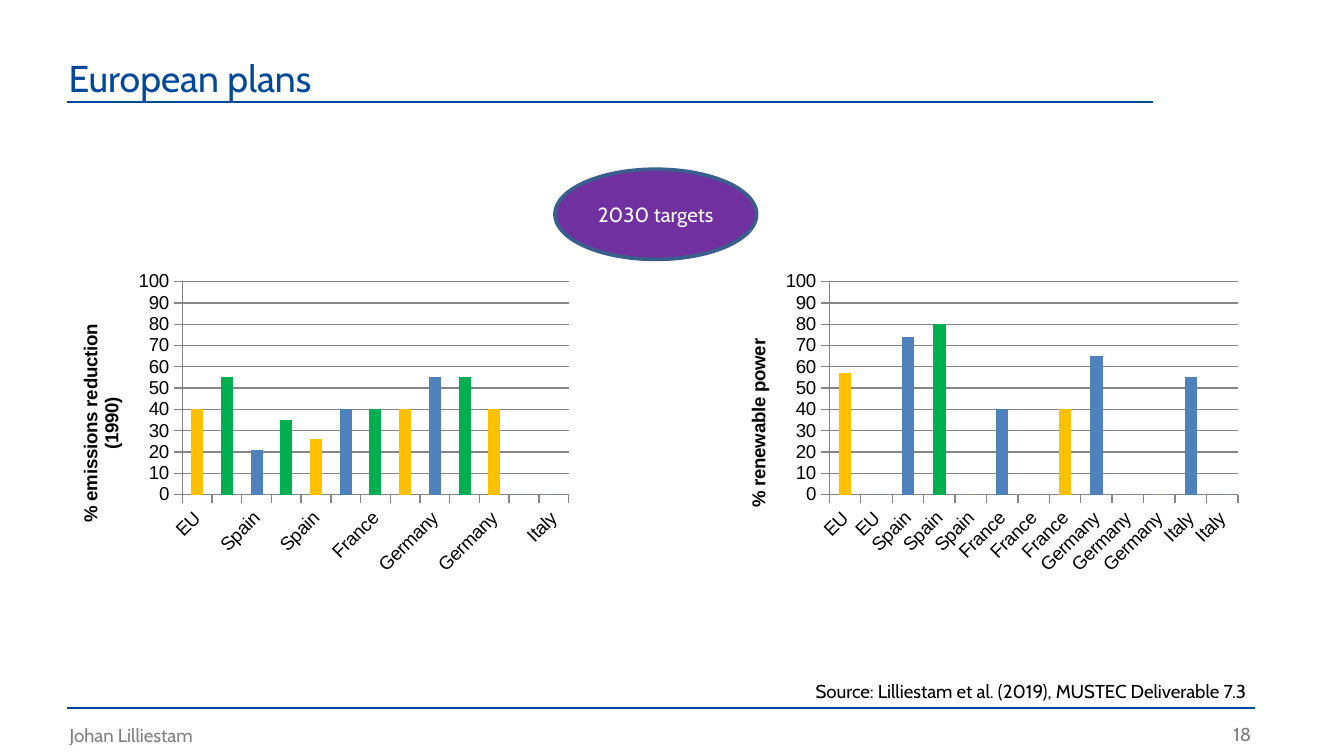
from pptx import Presentation
from pptx.chart.data import CategoryChartData
from pptx.dml.color import RGBColor
from pptx.enum.chart import XL_CHART_TYPE, XL_TICK_MARK
from pptx.enum.shapes import MSO_CONNECTOR, MSO_SHAPE
from pptx.enum.text import MSO_ANCHOR, PP_ALIGN
from pptx.oxml.ns import qn
from pptx.util import Inches, Pt
from lxml.etree import SubElement

BLUE, GRAY, BLACK, WHITE = "004899", "808080", "000000", "FFFFFF"
BAR, YELLOW, GREEN, GRID = "4F81BD", "FFC000", "00B050", "868686"
COUNTRIES = ["EU"] * 2 + ["Spain"] * 3 + ["France"] * 3 + ["Germany"] * 3 + ["Italy"] * 2
YELLOW_BARS, GREEN_BARS = (0, 4, 7, 10), (1, 3, 6, 9)


def color(value):
    return RGBColor.from_string(value)


def write(frame, text, size=10, fill=BLACK, align=PP_ALIGN.LEFT,
          anchor=MSO_ANCHOR.TOP, wrap=True, inset=None):
    frame.word_wrap = wrap
    frame.vertical_anchor = anchor
    if inset is not None:
        frame.margin_left = frame.margin_right = Inches(inset)
        frame.margin_top = frame.margin_bottom = Inches(inset)
    para = frame.paragraphs[0]
    para.alignment = align
    span = para.add_run()
    span.text = text
    span.font.name = "Cabin"
    span.font.size = Pt(size)
    span.font.color.rgb = color(fill)


class PlanSlide:
    def __init__(self, deck):
        self.page = deck.slides.add_slide(deck.slide_layouts[5])
        self.shapes = self.page.shapes

    def title(self, text, left, top, width, height):
        box = self.shapes.title
        box.left, box.top = Inches(left), Inches(top)
        box.width, box.height = Inches(width), Inches(height)
        write(box.text_frame, text, size=20, fill=BLUE, inset=0)

    def text(self, text, left, top, width, height, **style):
        box = self.shapes.add_textbox(Inches(left), Inches(top), Inches(width), Inches(height))
        write(box.text_frame, text, **style)

    def rule(self, left, right, top):
        line = self.shapes.add_connector(MSO_CONNECTOR.STRAIGHT, Inches(left), Inches(top),
                                         Inches(right), Inches(top))
        line.line.color.rgb = color(BLUE)
        line.line.width = Pt(1)
        SubElement(line._element.spPr, qn("a:effectLst"))

    def ellipse(self, text, left, top, width, height):
        shape = self.shapes.add_shape(MSO_SHAPE.OVAL, Inches(left), Inches(top),
                                      Inches(width), Inches(height))
        shape.shadow.inherit = False
        shape.fill.solid()
        shape.fill.fore_color.rgb = color("7030A0")
        shape.line.color.rgb = color("3A5F8C")
        shape.line.width = Pt(2)
        write(shape.text_frame, text, size=11, fill=WHITE,
              align=PP_ALIGN.CENTER, anchor=MSO_ANCHOR.MIDDLE)

    def chart(self, axis_title, values, left, width):
        data = CategoryChartData()
        data.categories = COUNTRIES
        data.add_series("Series 1", values)
        chart = self.shapes.add_chart(XL_CHART_TYPE.COLUMN_CLUSTERED, Inches(left), Inches(1.97),
                                      Inches(width), Inches(2.36), data).chart
        chart.has_legend = False
        chart.has_title = False
        chart.font.name = "Arial"
        chart.font.size = Pt(10)
        chart.font.color.rgb = color(BLACK)
        self.bars(chart.plots[0])
        self.axes(chart, axis_title)

    def bars(self, plot):
        plot.gap_width = 150
        plot.vary_by_categories = False
        series = plot.series[0]
        series.format.fill.solid()
        series.format.fill.fore_color.rgb = color(BAR)
        for fill, positions in ((YELLOW, YELLOW_BARS), (GREEN, GREEN_BARS)):
            for position in positions:
                point_fill = series.points[position].format.fill
                point_fill.solid()
                point_fill.fore_color.rgb = color(fill)

    def axes(self, chart, axis_title):
        categories, scale = chart.category_axis, chart.value_axis
        for axis in (categories, scale):
            axis.major_tick_mark = XL_TICK_MARK.OUTSIDE
            axis.format.line.color.rgb = color(GRID)
            axis.tick_labels.font.size = Pt(10)
        body = categories._element.find(qn("c:txPr")).find(qn("a:bodyPr"))
        body.set("rot", "-2700000")
        body.set("vert", "horz")
        scale.minimum_scale, scale.maximum_scale, scale.major_unit = 0, 100, 10
        scale.has_major_gridlines = True
        scale.major_gridlines.format.line.color.rgb = color(GRID)
        para = scale.axis_title.text_frame.paragraphs[0]
        span = para.add_run()
        span.text = axis_title
        span.font.name = "Arial"
        span.font.size = Pt(10)
        span.font.bold = True
        span.font.color.rgb = color(BLACK)


def main():
    deck = Presentation()
    deck.slide_width = Inches(10)
    deck.slide_height = deck.slide_width * 9 // 16
    slide = PlanSlide(deck)
    slide.text("Johan Lilliestam", 0.42, 5.34, 3.73, 0.27, fill=GRAY)
    slide.text("18", 9.02, 5.38, 0.29, 0.17, fill=GRAY,
               align=PP_ALIGN.RIGHT, wrap=False, inset=0)
    slide.rule(0.5, 9.34, 5.27)
    slide.rule(0.5, 8.58, 0.76)
    slide.title("European plans", 0.51, 0.41, 7.64, 0.36)
    slide.chart("% emissions reduction (1990)",
                (40, 55, 21, 35, 26, 40, 40, 40, 55, 55, 40, 0, 0), 0.38, 3.93)
    slide.chart("% renewable power",
                (57, 0, 74, 80, 0, 40, 0, 40, 65, 0, 0, 55, 0), 5.35, 3.94)
    slide.ellipse("2030 targets", 4.13, 1.26, 1.5, 0.67)
    slide.text("Source: Lilliestam et al. (2019), MUSTEC Deliverable 7.3",
               4.71, 5.01, 4.66, 0.27, align=PP_ALIGN.RIGHT)
    deck.save("out.pptx")


if __name__ == "__main__":
    main()
